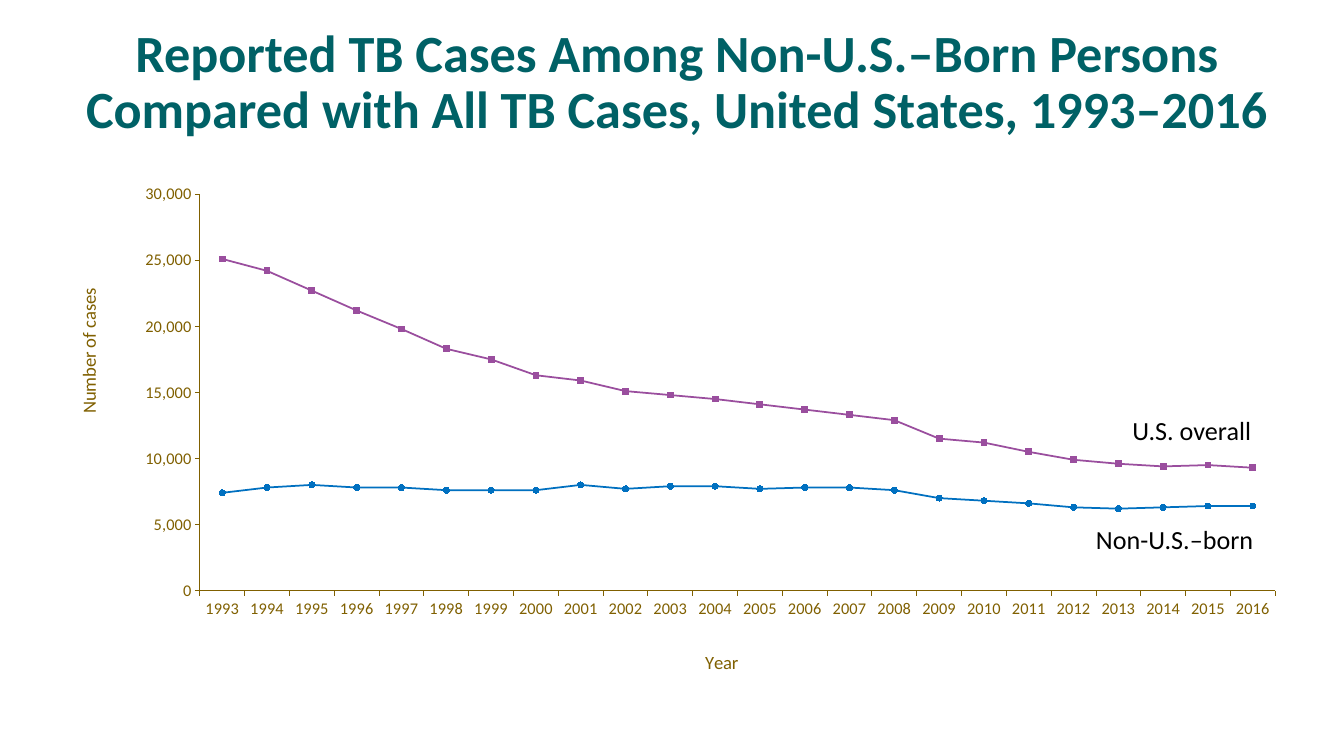
from dataclasses import dataclass

from lxml import etree
from pptx import Presentation
from pptx.chart.data import CategoryChartData
from pptx.dml.color import RGBColor
from pptx.enum.chart import XL_CHART_TYPE, XL_MARKER_STYLE, XL_TICK_MARK
from pptx.enum.text import MSO_ANCHOR, PP_ALIGN
from pptx.oxml.ns import qn
from pptx.util import Cm, Pt

LINE_MARKERS = XL_CHART_TYPE.LINE_MARKERS
SQUARE, CIRCLE = XL_MARKER_STYLE.SQUARE, XL_MARKER_STYLE.CIRCLE
TICK_OUT, TICK_NONE = XL_TICK_MARK.OUTSIDE, XL_TICK_MARK.NONE
BOTTOM, TOP = MSO_ANCHOR.BOTTOM, MSO_ANCHOR.TOP
CENTER, LEFT = PP_ALIGN.CENTER, PP_ALIGN.LEFT


@dataclass(frozen=True)
class Theme:
    font: str = "Calibri"
    title: RGBColor = RGBColor(0x00, 0x61, 0x66)
    text: RGBColor = RGBColor(0x00, 0x00, 0x00)
    axis: RGBColor = RGBColor(0x80, 0x60, 0x00)
    overall: RGBColor = RGBColor(0x9A, 0x4E, 0x9E)
    non_us: RGBColor = RGBColor(0x00, 0x70, 0xC0)
    title_size: Pt = Pt(44.8)
    title_spacing: Pt = Pt(48)
    label_size: Pt = Pt(22.4)
    axis_title_size: Pt = Pt(16)
    tick_size: Pt = Pt(14)


THEME = Theme()
TITLE = ("Reported TB Cases Among Non-U.S.–Born Persons "
         "Compared with All TB Cases, United States, 1993–2016")
YEARS = [str(year) for year in range(1993, 2017)]
OVERALL = [25100, 24200, 22700, 21200, 19800, 18300, 17500, 16300,
           15900, 15100, 14800, 14500, 14100, 13700, 13300, 12900,
           11500, 11200, 10500, 9900, 9600, 9400, 9500, 9300]
NON_US = [7400, 7800, 8000, 7800, 7800, 7600, 7600, 7600,
          8000, 7700, 7900, 7900, 7700, 7800, 7800, 7600,
          7000, 6800, 6600, 6300, 6200, 6300, 6400, 6400]
# Name, values, colour, marker
SERIES = [("U.S. overall", OVERALL, THEME.overall, SQUARE),
          ("Non-U.S.–born", NON_US, THEME.non_us, CIRCLE)]


def style_font(font, size, color, bold=False):
    font.name, font.size, font.bold = THEME.font, size, bold
    font.color.rgb = color


def add_text(slide, box, text, size, color, bold=False,
             align=LEFT, anchor=TOP, spacing=None):
    s = slide.shapes.add_textbox(*map(Cm, box))
    tf = s.text_frame
    tf.word_wrap = True
    tf.vertical_anchor = anchor
    p = tf.paragraphs[0]
    p.alignment = align
    p.line_spacing = spacing
    r = p.add_run()
    r.text = text
    style_font(r.font, size, color, bold)
    return tf


def set_layout(parent, index, inner=False, **fractions):
    """Place a chart part by fractions of the chart's size."""
    for old in parent.findall(qn("c:layout")):
        parent.remove(old)
    layout = etree.Element(qn("c:layout"))
    parent.insert(index, layout)
    manual = etree.SubElement(layout, qn("c:manualLayout"))
    settings = {"layoutTarget": "inner"} if inner else {}
    settings.update(xMode="edge", yMode="edge", **fractions)
    for tag, value in settings.items():
        etree.SubElement(manual, qn(f"c:{tag}")).set("val", str(value))


def style_axis(axis, title, x, y, rotation):
    axis.has_major_gridlines = False
    axis.major_tick_mark, axis.minor_tick_mark = TICK_OUT, TICK_NONE
    axis.format.line.color.rgb = THEME.axis
    axis.format.line.width = Pt(0.75)
    style_font(axis.tick_labels.font, THEME.tick_size, THEME.axis)
    tf = axis.axis_title.text_frame
    r = tf.paragraphs[0].add_run()
    r.text = title
    style_font(r.font, THEME.axis_title_size, THEME.axis)
    tf._txBody.bodyPr.set("rot", str(rotation * 60000))
    set_layout(axis.axis_title._element, 1, x=x, y=y)


def style_series(series, color, marker):
    series.smooth = False
    series.format.line.color.rgb = color
    series.format.line.width = Pt(1.5)
    series.marker.style, series.marker.size = marker, 5
    series.marker.format.fill.solid()
    series.marker.format.fill.fore_color.rgb = color
    series.marker.format.line.color.rgb = color


def add_case_chart(slide, box):
    data = CategoryChartData(number_format="#,##0")
    data.categories = YEARS
    for name, values, _, _ in SERIES:
        data.add_series(name, values)
    chart = slide.shapes.add_chart(LINE_MARKERS, *map(Cm, box), data).chart
    chart.has_title = chart.has_legend = False
    style_font(chart.font, THEME.tick_size, THEME.text)
    plot = chart.plots[0]
    plot.vary_by_categories = False
    for series, (_, _, color, marker) in zip(plot.series, SERIES):
        style_series(series, color, marker)

    # Axes and plot area
    style_axis(chart.category_axis, "Year", 0.52, 0.87, 0)
    cases = chart.value_axis
    style_axis(cases, "Number of cases", 0.01, 0.27, -90)
    cases.minimum_scale, cases.maximum_scale = 0, 30000
    cases.major_unit = 5000
    cases.tick_labels.number_format = "#,##0"
    cases.tick_labels.number_format_is_linked = False
    set_layout(chart._chartSpace.chart.plotArea, 0, inner=True,
               x=0.113, y=0.119, w=0.872, h=0.659)


def main():
    prs = Presentation()
    prs.slide_width, prs.slide_height = Cm(40.64), Cm(22.86)
    slide = prs.slides.add_slide(prs.slide_layouts[6])

    # Title
    tf = add_text(slide, (1.83, 0.51, 37.29, 3.81), TITLE, THEME.title_size,
                  THEME.title, True, CENTER, BOTTOM, THEME.title_spacing)
    tf.margin_left = tf.margin_right = Cm(0.13)
    tf.margin_top = tf.margin_bottom = Cm(0.13)

    # Chart
    add_case_chart(slide, (1.83, 3.71, 37.29, 18.19))

    # Line labels
    for (name, *_), (left, top) in zip(SERIES, [(33.99, 12.42), (32.89, 15.7)]):
        add_text(slide, (left, top, 7.32, 1.22), name,
                 THEME.label_size, THEME.text)

    prs.save("out.pptx")


if __name__ == "__main__":
    main()
